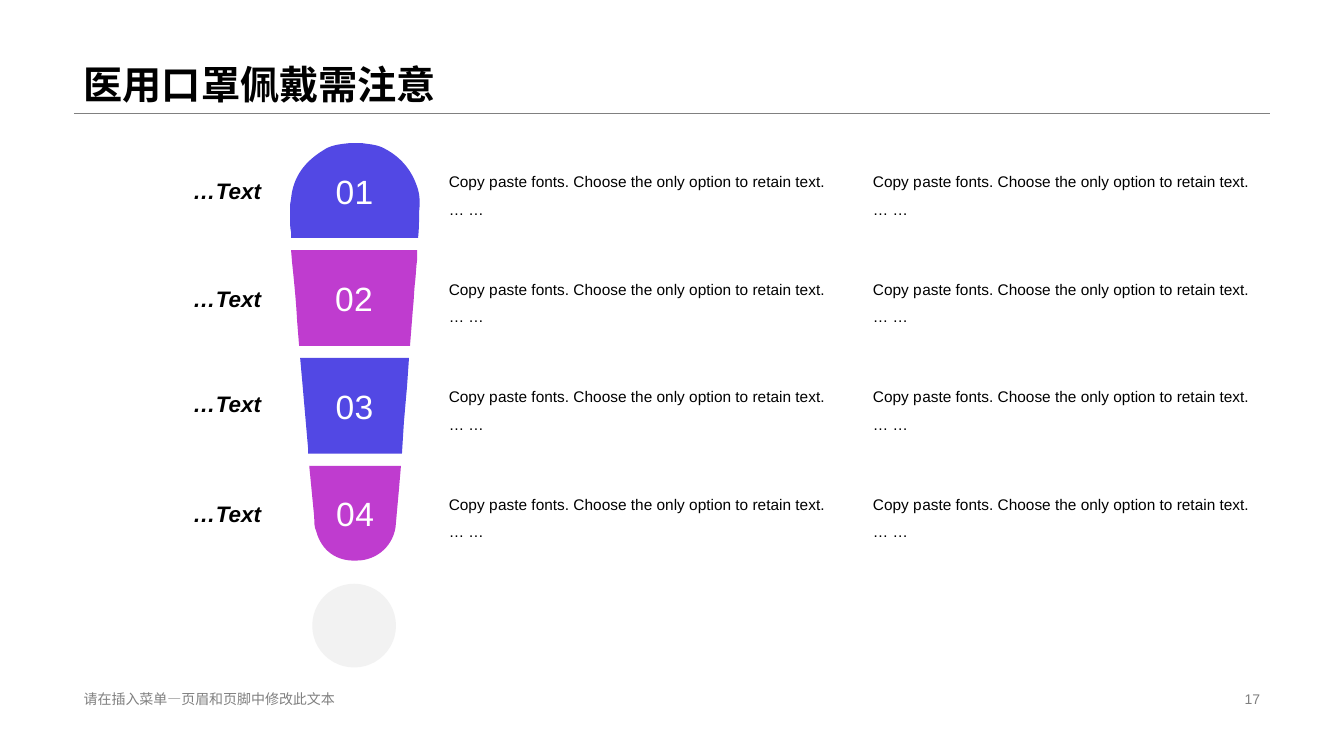
from pptx import Presentation
from pptx.dml.color import RGBColor
from pptx.enum.shapes import MSO_CONNECTOR as Connector, MSO_SHAPE as Preset
from pptx.enum.text import MSO_ANCHOR as Anchor, MSO_AUTO_SIZE as AutoSize, PP_ALIGN as Align
from pptx.oxml.ns import qn
from pptx.util import Cm, Pt
from lxml.etree import SubElement

FONT = "Arial"
BLUE, PURPLE, PALE, GREY = "5248E4", "BF3CCF", "F2F2F2", "808080"
OUTLINE_UNIT = Cm(0.0254)
ROW_PITCH = 2.71
LABEL_TOPS = (0, 2.72, 5.36, 8.13)
LABEL = [("…", "Text")]
DETAIL = [("Copy p", "aste fonts. Choose the only option to retain text."), ("… …",)]

SEGMENTS = [
    ("1", BLUE, [
        (58, 0), (62, 0, 67, 0, 72, 0), (78, 1, 84, 1, 91, 4),
        (108, 12, 120, 25, 126, 43), (129, 51, 129, 60, 128, 68),
        (128, 77, 128, 85, 127, 94), (1, 94), (1, 88),
        (0, 84, 0, 80, 0, 75), (0, 71, 0, 66, 0, 61),
        (1, 59, 0, 57, 1, 55), (3, 33, 15, 18, 33, 7), (40, 2, 49, 1, 58, 0)]),
    ("2", PURPLE, [
        (1, 106), (126, 106), (126, 116), (125, 123, 125, 130, 124, 138),
        (123, 146, 123, 155, 122, 163), (119, 201), (9, 201), (7, 176),
        (6, 157, 4, 137, 2, 118)]),
    ("3", BLUE, [
        (10, 213), (118, 213), (116, 242), (115, 253, 114, 265, 113, 276),
        (111, 308), (18, 308), (18, 304), (16, 281, 14, 258, 12, 235)]),
    ("4", PURPLE, [
        (19, 320), (110, 320), (108, 344), (107, 355, 106, 366, 105, 377),
        (104, 398, 87, 414, 66, 414), (46, 415, 31, 404, 26, 385),
        (24, 381, 24, 376, 24, 371)]),
]


def colour(code):
    return RGBColor.from_string(code)


def write(shape, lines, size, color="000000", bold=False, italic=False,
          align=Align.LEFT, anchor=Anchor.MIDDLE, spacing=1.0):
    frame = shape.text_frame
    frame.word_wrap = True
    frame.auto_size = AutoSize.NONE
    frame.vertical_anchor = anchor
    frame.margin_left = frame.margin_right = Cm(0.25)
    frame.margin_top = frame.margin_bottom = Cm(0.13)
    for index, chunks in enumerate(lines):
        para = frame.add_paragraph() if index else frame.paragraphs[0]
        para.alignment = align
        para.line_spacing = spacing
        spans = [(chunks[0], size)]
        for chunk in chunks[1:]:
            spans += [(" ", 1), (chunk, size)]
        for text, points in spans:
            span = para.add_run()
            span.text = text
            span.font.name = FONT
            span.font.size = Pt(points)
            span.font.bold = bold
            span.font.italic = italic
            span.font.color.rgb = colour(color)


def add_text(page, box, lines, size, **style):
    write(page.shapes.add_textbox(*map(Cm, box)), lines, size, **style)


def paint(shape, color):
    shape.shadow.inherit = False
    shape.fill.solid()
    shape.fill.fore_color.rgb = colour(color)
    shape.line.fill.background()


def add_outline(page, left, top, outline):
    steps = [[(Cm(left) + x * OUTLINE_UNIT, Cm(top) + y * OUTLINE_UNIT)
              for x, y in zip(step[::2], step[1::2])] for step in outline]
    builder = page.shapes.build_freeform(*steps[0][0])
    builder.add_line_segments([step[-1] for step in steps[1:]], close=True)
    shape = builder.convert_to_shape()
    straight = list(shape.element.spPr.iter(qn("a:lnTo")))
    for line, step in zip(straight, steps[1:]):
        if len(step) == 3:
            line.tag = qn("a:cubicBezTo")
            line.remove(line[0])
            for x, y in step:
                SubElement(line, qn("a:pt"), x=str(x - shape.left), y=str(y - shape.top))
    return shape


def add_header(page, left, top, width, height):
    title = page.shapes.title
    title.left, title.top, title.width, title.height = map(Cm, (left, top, width, height))
    write(title, [("医用口罩佩戴需注意",)], 28, bold=True, anchor=Anchor.BOTTOM, spacing=0.9)
    base = top + height
    rule = page.shapes.add_connector(
        Connector.STRAIGHT, Cm(left), Cm(base), Cm(left + width), Cm(base))
    rule.line.color.rgb = colour(GREY)
    rule.line.width = Pt(0.25)
    SubElement(rule.element.spPr, qn("a:effectLst"))


def add_exclamation_mark(page, left, top):
    for digit, color, outline in SEGMENTS:
        segment = add_outline(page, left, top, outline)
        paint(segment, color)
        write(segment, [("0", digit)], 24, color="FFFFFF", align=Align.CENTER)
    dot = page.shapes.add_shape(
        Preset.OVAL, Cm(left + 0.56), Cm(top + 11.1), Cm(2.11), Cm(2.11))
    paint(dot, PALE)


def add_labels(page, left, top, width, height):
    for offset in LABEL_TOPS:
        add_text(page, (left, top + offset, width, height), LABEL, 16,
                 bold=True, italic=True, align=Align.RIGHT)


def add_details(page, left, top, width, height, gap):
    for row in range(len(SEGMENTS)):
        for column in range(2):
            box = (left + column * (width + gap), top + row * ROW_PITCH, width, height)
            add_text(page, box, DETAIL, 11, spacing=1.5)


def add_footer(page, left, top, width, height):
    add_text(page, (left, top, 11.51, height),
             [("请在插入菜单—页眉和页脚中修改此文本",)], 10, color=GREY)
    number_width = 8.08
    add_text(page, (left + width - number_width, top, number_width, height),
             [("17",)], 10, color=GREY, align=Align.RIGHT)


def main():
    deck = Presentation()
    deck.slide_width, deck.slide_height = Cm(33.87), Cm(19.05)
    page = deck.slides.add_slide(deck.slide_layouts[5])
    add_header(page, 1.86, 0, 30.15, 2.86)
    add_exclamation_mark(page, 7.31, 3.61)
    add_labels(page, 1.83, 4.04, 5, 1.52)
    add_details(page, 11.06, 3.7, 10.26, 2.21, 0.43)
    add_footer(page, 1.86, 17.32, 30.15, 0.58)
    deck.save("out.pptx")


if __name__ == "__main__":
    main()
